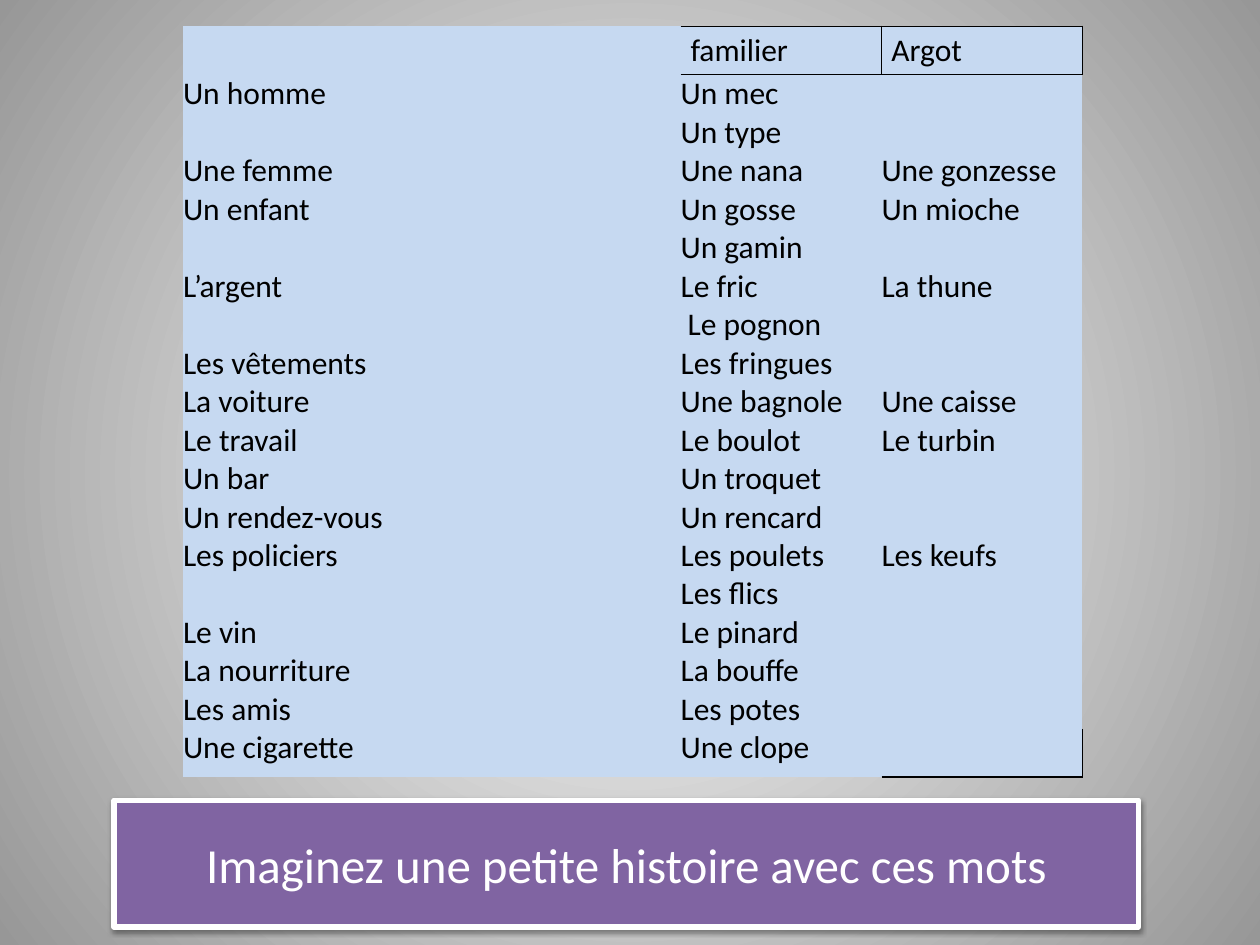
from dataclasses import dataclass

from lxml.etree import SubElement
from pptx import Presentation
from pptx.dml.color import RGBColor
from pptx.enum.text import MSO_ANCHOR, MSO_AUTO_SIZE, PP_ALIGN
from pptx.oxml.ns import qn
from pptx.util import Cm, Pt


@dataclass(frozen=True)
class Theme:
    font: str = "Calibri"
    table_size: int = 18
    title_size: int = 28
    text: str = "000000"
    light: str = "FFFFFF"
    edge: str = "979797"
    cell: str = "C6D9F1"
    banner: str = "8064A2"


THEME = Theme()

# Standard word, familiar words, slang word
VOCABULARY = [
    ("", ["familier"], "Argot"),
    ("Un homme", ["Un mec", "Un type"], ""),
    ("Une femme", ["Une nana"], "Une gonzesse"),
    ("Un enfant", ["Un gosse", "Un gamin"], "Un mioche"),
    ("L’argent", ["Le fric", " Le pognon"], "La thune"),
    ("Les vêtements", ["Les fringues"], ""),
    ("La voiture", ["Une bagnole"], "Une caisse"),
    ("Le travail", ["Le boulot"], "Le turbin"),
    ("Un bar", ["Un troquet"], ""),
    ("Un rendez-vous", ["Un rencard"], ""),
    ("Les policiers", ["Les poulets", "Les flics"], "Les keufs"),
    ("Le vin", ["Le pinard"], ""),
    ("La nourriture", ["La bouffe"], ""),
    ("Les amis", ["Les potes"], ""),
    ("Une cigarette", ["Une clope"], ""),
]
LAST_ROW = len(VOCABULARY) - 1
COLUMN_WIDTHS = (10.03, 4.05, 4.05)
LINE_HEIGHT = 0.77
OUTER_ROW_HEIGHT = 0.97

# Visible borders by (row, column); all other borders are off
BORDERS = {
    (0, 1): ("lnR", "lnT", "lnB"),
    (0, 2): ("lnL", "lnR", "lnT", "lnB"),
    (1, 1): ("lnT",),
    (1, 2): ("lnT",),
    (LAST_ROW, 2): ("lnR", "lnB"),
}


def add_run(paragraph, text, size, color):
    run = paragraph.add_run()
    run.text = text
    run.font.name = THEME.font
    run.font.size = Pt(size)
    run.font.color.rgb = RGBColor.from_string(color)


def set_background(slide):
    fill = slide.background.fill
    fill.gradient()
    for stop, color in zip(fill.gradient_stops, (THEME.light, THEME.edge)):
        stop.color.rgb = RGBColor.from_string(color)
    # Turn the linear gradient into a circular one around the centre
    gradient = slide.element.find(".//" + qn("a:gradFill"))
    gradient.remove(gradient.find(qn("a:lin")))
    circle = SubElement(gradient, qn("a:path"), path="circle")
    SubElement(circle, qn("a:fillToRect"), l="50000", t="50000", r="50000", b="50000")


def set_borders(cell, visible):
    properties = cell._tc.get_or_add_tcPr()
    for position, side in enumerate(("lnL", "lnR", "lnT", "lnB")):
        line = SubElement(properties, qn("a:" + side), w=str(Pt(1)))
        properties.insert(position, line)
        if side in visible:
            solid = SubElement(line, qn("a:solidFill"))
            SubElement(solid, qn("a:srgbClr"), val=THEME.text)
        else:
            SubElement(line, qn("a:noFill"))


def fill_cell(cell, lines, is_header):
    cell.margin_left = cell.margin_right = Cm(0.2 if is_header else 0)
    cell.margin_top = cell.margin_bottom = Cm(0.1 if is_header else 0)
    cell.fill.solid()
    cell.fill.fore_color.rgb = RGBColor.from_string(THEME.cell)
    frame = cell.text_frame
    for index, text in enumerate(lines):
        paragraph = frame.add_paragraph() if index else frame.paragraphs[0]
        if text:
            add_run(paragraph, text, THEME.table_size, THEME.text)
        else:
            paragraph.font.size = Pt(THEME.table_size)


def add_vocabulary_table(slide):
    heights = [LINE_HEIGHT * len(familiar) for _, familiar, _ in VOCABULARY]
    heights[0] = heights[-1] = OUTER_ROW_HEIGHT
    table = slide.shapes.add_table(
        len(VOCABULARY), len(COLUMN_WIDTHS), Cm(3.69), Cm(0.53),
        Cm(sum(COLUMN_WIDTHS)), Cm(sum(heights))).table
    table.first_row = table.horz_banding = False
    for column, width in zip(table.columns, COLUMN_WIDTHS):
        column.width = Cm(width)
    for row_index, (standard, familiar, slang) in enumerate(VOCABULARY):
        table.rows[row_index].height = Cm(heights[row_index])
        for column_index, lines in enumerate(([standard], familiar, [slang])):
            cell = table.cell(row_index, column_index)
            fill_cell(cell, lines, row_index == 0)
            set_borders(cell, BORDERS.get((row_index, column_index), ()))


def add_shadow(shape):
    effects = SubElement(shape.element.spPr, qn("a:effectLst"))
    shadow = SubElement(effects, qn("a:outerShdw"), blurRad=str(Pt(3.1)),
                        dist=str(Pt(1.6)), dir="5400000", rotWithShape="0")
    color = SubElement(shadow, qn("a:srgbClr"), val=THEME.text)
    SubElement(color, qn("a:alpha"), val="38000")


def format_title(title, text):
    title.left, title.top = Cm(2.3), Cm(16.13)
    title.width, title.height = Cm(20.65), Cm(2.56)
    title.fill.solid()
    title.fill.fore_color.rgb = RGBColor.from_string(THEME.banner)
    title.line.color.rgb = RGBColor.from_string(THEME.light)
    title.line.width = Pt(3)
    add_shadow(title)
    frame = title.text_frame
    frame.word_wrap = True
    frame.auto_size = MSO_AUTO_SIZE.NONE
    frame.vertical_anchor = MSO_ANCHOR.MIDDLE
    paragraph = frame.paragraphs[0]
    paragraph.alignment = PP_ALIGN.CENTER
    add_run(paragraph, text, THEME.title_size, THEME.light)


def main():
    presentation = Presentation()
    presentation.slide_width, presentation.slide_height = Cm(25.4), Cm(19.05)
    slide = presentation.slides.add_slide(presentation.slide_layouts[5])
    set_background(slide)
    # Word list
    add_vocabulary_table(slide)
    # Task banner
    format_title(slide.shapes.title, "Imaginez une petite histoire avec ces mots")
    presentation.save("out.pptx")


if __name__ == "__main__":
    main()
